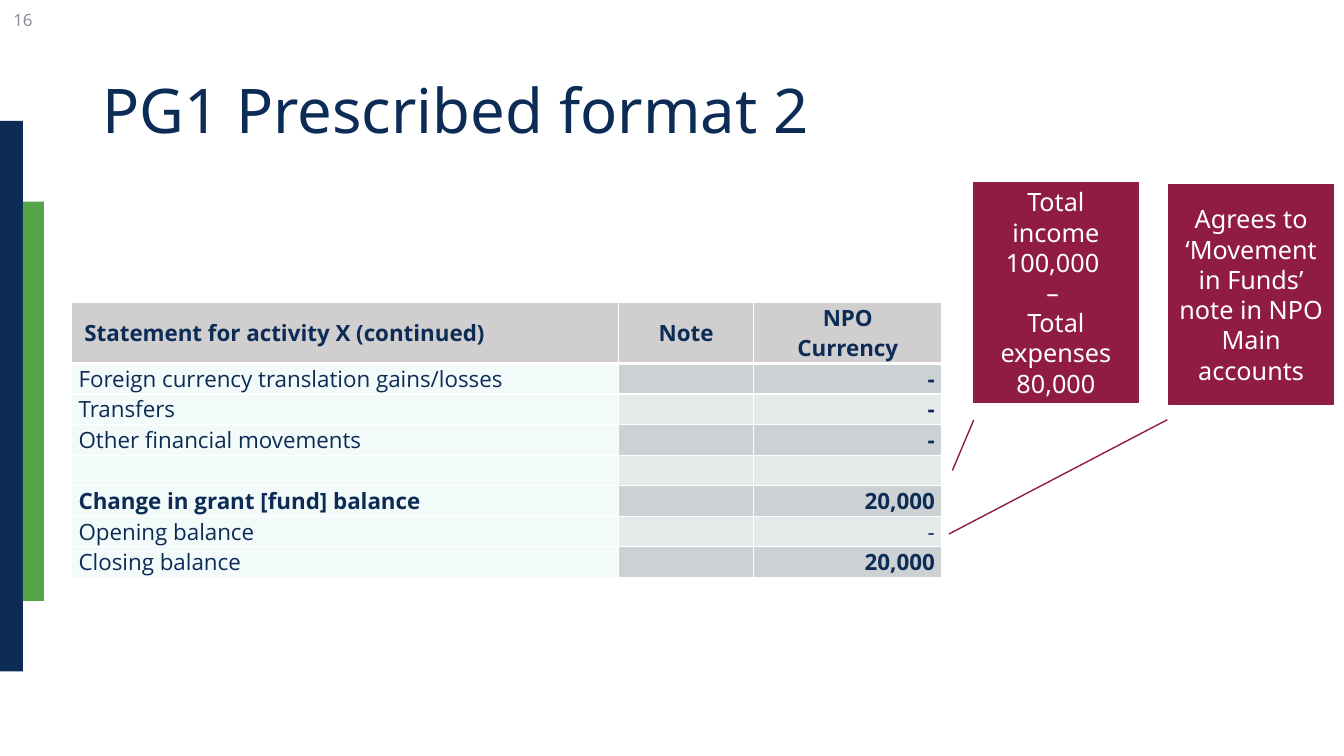
"""Build the slide showing the second part of the PG1 prescribed format."""
from typing import NamedTuple

from lxml import etree
from pptx import Presentation
from pptx.dml.color import RGBColor
from pptx.enum.shapes import MSO_SHAPE
from pptx.enum.text import MSO_ANCHOR, PP_ALIGN
from pptx.oxml.ns import qn
from pptx.util import Cm, Pt

RECTANGLE = MSO_SHAPE.RECTANGLE
CALLOUT = MSO_SHAPE.LINE_CALLOUT_1
MIDDLE, TOP = MSO_ANCHOR.MIDDLE, MSO_ANCHOR.TOP
LEFT, CENTER, RIGHT = PP_ALIGN.LEFT, PP_ALIGN.CENTER, PP_ALIGN.RIGHT
JUSTIFY = PP_ALIGN.JUSTIFY

NAVY, GREEN, CRIMSON = "0C2C56", "56A448", "901D41"
WHITE, GREY, HEADER_GREY, AQUA = "FFFFFF", "8C8F9A", "D0CECE", "8DCFD6"
BANDS = ("CCD2D4", "E7EAEB")
SLIDE_FONT, TABLE_FONT = "Noto Sans", "Open Sans"


class Box(NamedTuple):
    left: float
    top: float
    width: float
    height: float


class Style(NamedTuple):
    size: float
    color: str
    align: PP_ALIGN
    font: str = SLIDE_FONT
    bold: bool = False


class Bar(NamedTuple):
    box: Box
    color: str


class Callout(NamedTuple):
    box: Box
    lines: list[str]
    pointer: tuple[float, ...]


class Entry(NamedTuple):
    label: str
    amount: str
    label_bold: bool = False
    amount_bold: bool = True


BARS = [
    Bar(Box(0, 3.05, 0.58, 13.87), NAVY),
    Bar(Box(0.58, 5.08, 0.53, 10.06), GREEN),
]
CALLOUTS = [
    Callout(Box(24.54, 4.6, 4.14, 5.54),
            ["Total income 100,000 ", "– ", "Total expenses", "80,000"],
            (1.08, 0, 1.31, -0.13)),
    Callout(Box(29.46, 4.65, 4.14, 5.54),
            ["Agrees to ‘Movement in Funds’ note in NPO Main accounts"],
            (1.07, -0.01, 1.59, -1.34)),
]
HEADINGS = [
    (" Statement for activity X (continued)", JUSTIFY),
    ("Note", CENTER),
    ("NPO\nCurrency", CENTER),
]
ENTRIES = [
    Entry("Foreign currency translation gains/losses", "-"),
    Entry("Transfers", "-"),
    Entry("Other financial movements", "-"),
    Entry("", ""),
    Entry("Change in grant [fund] balance", "20,000", label_bold=True),
    Entry("Opening balance", "-", amount_bold=False),
    Entry("Closing balance", "20,000"),
]
COLUMN_WIDTHS = (13.79, 3.4, 4.75)
HEADER_HEIGHT, ROW_HEIGHT = 1.54, 0.77


def rgb(color: str) -> RGBColor:
    return RGBColor.from_string(color)


def write(frame, lines: list[str], style: Style) -> None:
    frame.word_wrap = True
    for index, line in enumerate(lines):
        paragraph = frame.paragraphs[0] if index == 0 else frame.add_paragraph()
        paragraph.text = line
        paragraph.alignment = style.align
        font = paragraph.font
        font.name, font.size, font.bold = style.font, Pt(style.size), style.bold
        font.color.rgb = rgb(style.color)


def add_text(slide, box: Box, text: str, style: Style, spacing: float = 1.0) -> None:
    frame = slide.shapes.add_textbox(*map(Cm, box)).text_frame
    write(frame, [text], style)
    frame.vertical_anchor = MIDDLE
    frame.paragraphs[0].line_spacing = spacing


def add_block(slide, kind: MSO_SHAPE, box: Box, color: str):
    block = slide.shapes.add_shape(kind, *map(Cm, box))
    block.shadow.inherit = False
    block.fill.solid()
    block.fill.fore_color.rgb = rgb(color)
    block.line.fill.background()
    return block


def add_callout(slide, callout: Callout) -> None:
    block = add_block(slide, CALLOUT, callout.box, CRIMSON)
    block.line.color.rgb = rgb(CRIMSON)
    block.line.width = Pt(1)
    for index, value in enumerate(callout.pointer):
        block.adjustments[index] = value
    write(block.text_frame, callout.lines, Style(18, WHITE, CENTER))
    block.text_frame.vertical_anchor = MIDDLE


def fill_cell(cell, text: str, style: Style, color: str, anchor: MSO_ANCHOR = TOP,
              top_border: float = 1, bottom_border: float = 1) -> None:
    cell.margin_left = cell.margin_right = Cm(0.18)
    cell.margin_top = cell.margin_bottom = 0
    cell.vertical_anchor = anchor
    write(cell.text_frame, text.split("\n"), style)
    cell.fill.solid()
    cell.fill.fore_color.rgb = rgb(color)
    properties = cell._tc.get_or_add_tcPr()
    if color == AQUA:
        shade = properties.find(f".//{qn('a:srgbClr')}")
        etree.SubElement(shade, qn("a:alpha"), val="10000")
    borders = {"a:lnL": 1, "a:lnR": 1, "a:lnT": top_border, "a:lnB": bottom_border}
    for index, (side, width) in enumerate(borders.items()):
        border = etree.Element(qn(side), w=str(Pt(width)))
        solid = etree.SubElement(border, qn("a:solidFill"))
        etree.SubElement(solid, qn("a:srgbClr"), val=WHITE)
        properties.insert(index, border)


def add_statement(slide) -> None:
    box = Box(1.8, 7.62, sum(COLUMN_WIDTHS), HEADER_HEIGHT + ROW_HEIGHT * len(ENTRIES))
    table = slide.shapes.add_table(
        len(ENTRIES) + 1, len(COLUMN_WIDTHS), *map(Cm, box)).table
    table.first_row = table.horz_banding = False
    for column, width in zip(table.columns, COLUMN_WIDTHS):
        column.width = Cm(width)
    for index, row in enumerate(table.rows):
        row.height = Cm(ROW_HEIGHT if index else HEADER_HEIGHT)
    for column, (heading, align) in enumerate(HEADINGS):
        fill_cell(table.cell(0, column), heading,
                  Style(16, NAVY, align, TABLE_FONT, True),
                  HEADER_GREY, MIDDLE, bottom_border=3)
    for index, entry in enumerate(ENTRIES):
        band = BANDS[index % 2]
        values = [
            (entry.label, JUSTIFY, entry.label_bold, AQUA),
            ("", CENTER, False, band),
            (entry.amount, RIGHT, entry.amount_bold, band),
        ]
        for column, (text, align, bold, color) in enumerate(values):
            fill_cell(table.cell(index + 1, column), text,
                      Style(16, NAVY, align, TABLE_FONT, bold), color,
                      top_border=1 if index else 3)


def main() -> None:
    deck = Presentation()
    deck.slide_width, deck.slide_height = Cm(33.87), Cm(19.05)
    slide = deck.slides.add_slide(deck.slide_layouts[6])
    for bar in BARS:
        add_block(slide, RECTANGLE, bar.box, bar.color)
    add_text(slide, Box(0, 0, 1.07, 1.02), "16", Style(12, GREY, RIGHT))
    for callout in CALLOUTS:
        add_callout(slide, callout)
    add_statement(slide)
    add_text(slide, Box(2.34, 1.02, 29.21, 3.68), "PG1 Prescribed format 2",
             Style(44, NAVY, LEFT), spacing=0.9)
    deck.save("out.pptx")


if __name__ == "__main__":
    main()
